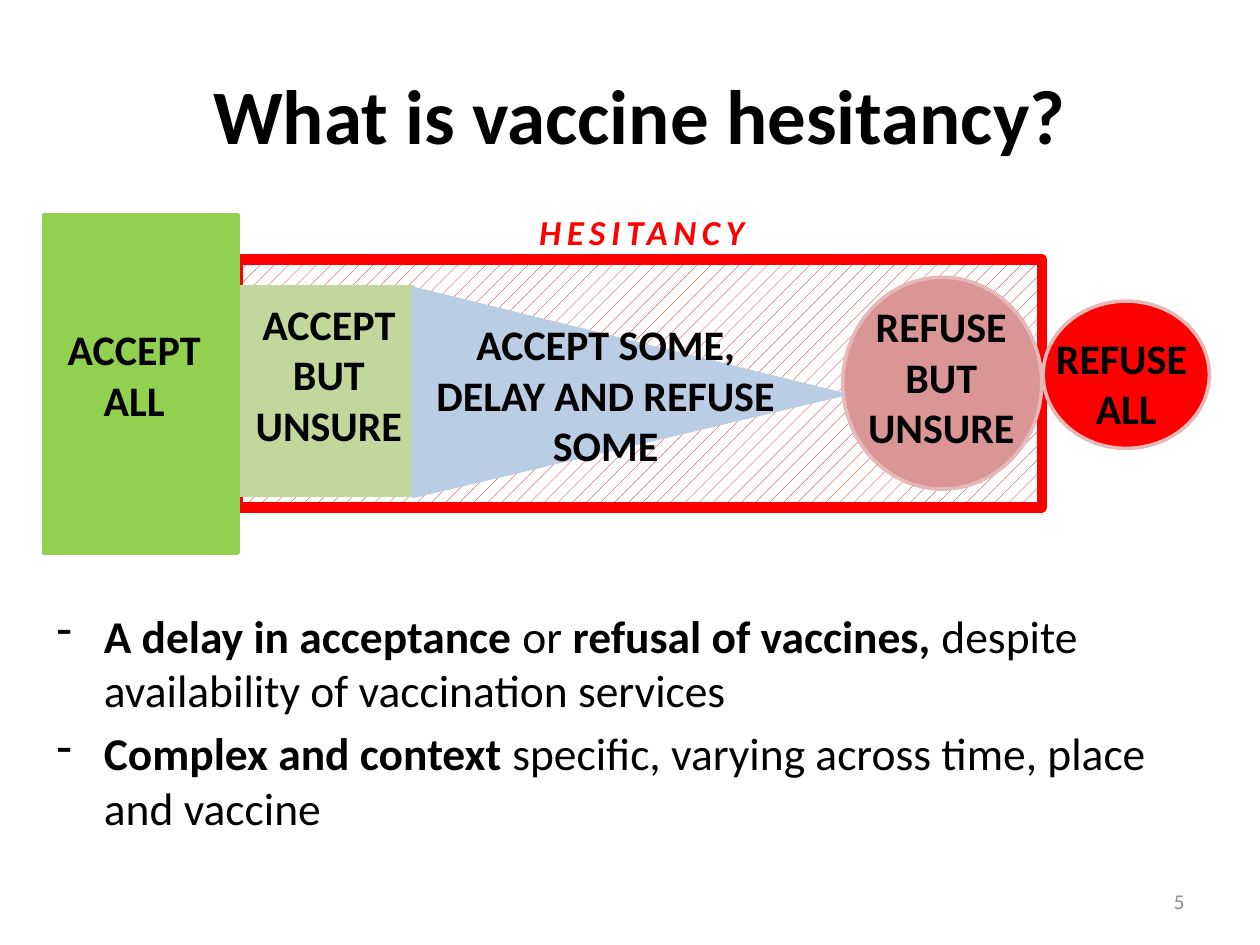
from lxml.etree import SubElement
from pptx import Presentation
from pptx.dml.color import RGBColor
from pptx.enum.dml import MSO_PATTERN
from pptx.enum.shapes import MSO_SHAPE
from pptx.enum.text import MSO_ANCHOR, MSO_AUTO_SIZE, PP_ALIGN
from pptx.oxml.ns import qn
from pptx.util import Cm, Pt

FONT = "Calibri"
TITLE = "What is vaccine hesitancy?"

# Each point is a list of (text, bold) runs
POINTS = [
    [("A delay in acceptance ", True), ("or ", False),
     ("refusal of vaccines, ", True),
     ("despite availability of vaccination services", False)],
    [("Complex and context ", True),
     ("specific, varying across time, place and vaccine", False)],
]

# Places are left, top, width, height in cm
ZONE = (4.8, 5.23, 16.21, 5)
WEDGE = (10.57, 3.58, 4.19, 8.66)
UNSURE = (4.75, 5.79, 3.58, 4.19)
DOUBT = (16.99, 5.59, 4.01, 4.27)
REFUSE = (21.03, 6.07, 3.35, 2.97)
ACCEPT = (0.89, 4.34, 3.91, 6.81)

# kind, place, fill, line
STAGES = [
    (MSO_SHAPE.RECTANGLE, UNSURE, "C3D69B", "C3D69B"),
    (MSO_SHAPE.OVAL, DOUBT, "D99694", "E6B9B8"),
    (MSO_SHAPE.OVAL, REFUSE, "FF0000", "E6B9B8"),
    (MSO_SHAPE.RECTANGLE, ACCEPT, "92D050", "92D050"),
    (MSO_SHAPE.ISOSCELES_TRIANGLE, WEDGE, "B9CDE5", "B9CDE5"),
]

LABELS = [
    (["ACCEPT ALL"], (0.61, 6.4, 4.19, 2.31)),
    (["ACCEPT SOME, DELAY AND REFUSE SOME"], (8.26, 6.3, 7.9, 3.33)),
    (["ACCEPT BUT UNSURE"], (4.37, 5.89, 4.52, 3.33)),
    (["REFUSE ", "ALL"], (20.9, 6.58, 3.61, 2.31)),
    (["REFUSE BUT UNSURE"], (16.92, 5.94, 4.11, 3.33)),
]


def tint(hue):
    return RGBColor.from_string(hue)


def put(shape, place):
    """Move and size a shape to a place in cm."""
    shape.left, shape.top, shape.width, shape.height = map(Cm, place)


def write(par, text, size=24, hue="000000", bold=True, italic=False, gap=0):
    """Add a formatted run; gap is the letter spacing in points."""
    run = par.add_run()
    run.text = text
    font = run.font
    font.name, font.size = FONT, Pt(size)
    font.bold, font.italic = bold, italic
    font.color.rgb = tint(hue)
    if gap:
        font._element.set("spc", str(round(gap * 100)))


def label(slide, lines, place, align=PP_ALIGN.CENTER,
          anchor=MSO_ANCHOR.TOP, **form):
    """Add a text box with one paragraph per line."""
    frame = slide.shapes.add_textbox(*map(Cm, place)).text_frame
    frame.word_wrap = True
    frame.vertical_anchor = anchor
    for i, line in enumerate(lines):
        par = frame.add_paragraph() if i else frame.paragraphs[0]
        par.alignment = align
        write(par, line, **form)


def block(slide, kind, place, line, width):
    """Add an outlined shape without shadow."""
    shape = slide.shapes.add_shape(kind, *map(Cm, place))
    shape.shadow.inherit = False
    shape.line.color.rgb = tint(line)
    shape.line.width = Pt(width)
    return shape


def dash(par):
    """Give a paragraph a hanging dash bullet."""
    props = par._p.get_or_add_pPr()
    props.set("marL", str(Cm(0.95)))
    props.set("indent", str(-Cm(0.95)))
    SubElement(props, qn("a:buFontTx"))
    SubElement(props, qn("a:buChar")).set("char", "-")


def fill_title(slide):
    title = slide.shapes.title
    put(title, (1.47, 1.37, 22.86, 3.18))
    frame = title.text_frame
    frame.auto_size = MSO_AUTO_SIZE.NONE
    frame.vertical_anchor = MSO_ANCHOR.TOP
    frame.margin_top = 0
    par = frame.paragraphs[0]
    par.alignment = PP_ALIGN.CENTER
    write(par, TITLE, size=44)


def fill_body(slide):
    body = slide.placeholders[1]
    put(body, (0.89, 12.12, 23.27, 5.79))
    frame = body.text_frame
    frame.auto_size = MSO_AUTO_SIZE.NONE
    for i, point in enumerate(POINTS):
        par = frame.add_paragraph() if i else frame.paragraphs[0]
        par.space_before = Pt(5)
        dash(par)
        for text, bold in point:
            write(par, text, size=26, bold=bold)


def draw_scale(slide):
    zone = block(slide, MSO_SHAPE.RECTANGLE, ZONE, "FF0000", 6)
    zone.fill.patterned()
    zone.fill.pattern = MSO_PATTERN.PERCENT_10
    zone.fill.fore_color.rgb = tint("C00000")
    zone.fill.back_color.rgb = tint("FFFFFF")

    for kind, place, fill, line in STAGES:
        stage = block(slide, kind, place, line, 2)
        stage.fill.solid()
        stage.fill.fore_color.rgb = tint(fill)
        if kind == MSO_SHAPE.ISOSCELES_TRIANGLE:
            stage.rotation = 90
            stage.adjustments[0] = 0.51

    for lines, place in LABELS:
        label(slide, lines, place)
    label(slide, ["HESITANCY"], (10.62, 4.11, 6.3, 1.12), PP_ALIGN.LEFT,
          size=20, hue="FF0000", italic=True, gap=3.2)


def main():
    deck = Presentation()
    deck.slide_width, deck.slide_height = Cm(25.4), Cm(19.05)
    slide = deck.slides.add_slide(deck.slide_layouts[1])
    fill_title(slide)
    fill_body(slide)
    draw_scale(slide)
    label(slide, ["5"], (18.21, 17.65, 5.92, 1.02), PP_ALIGN.RIGHT,
          MSO_ANCHOR.MIDDLE, size=12, hue="8C8C8C", bold=False)
    deck.save("out.pptx")


if __name__ == "__main__":
    main()
